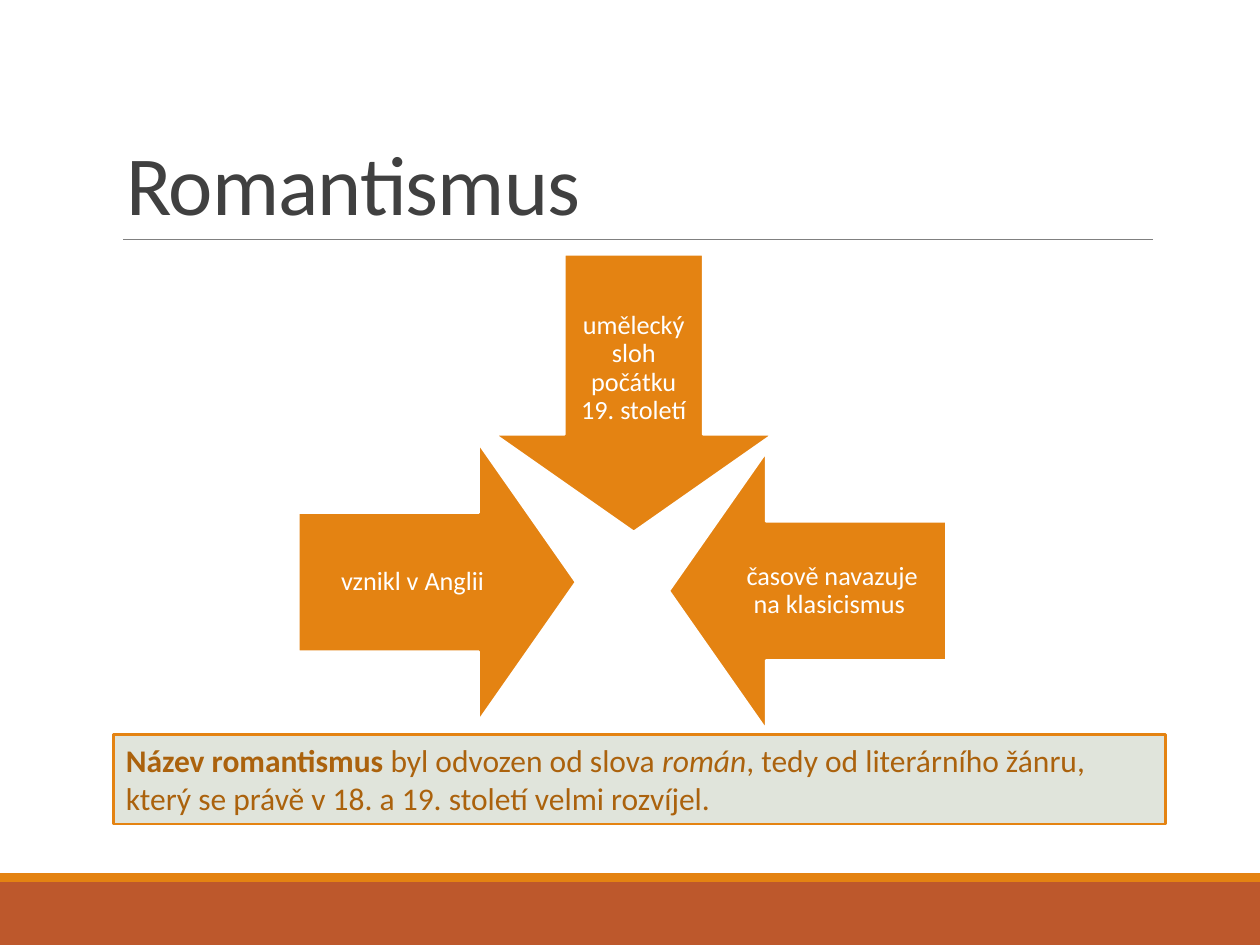
from pptx import Presentation
from pptx.dml.color import RGBColor
from pptx.enum import shapes, text
from pptx.oxml.ns import qn
from pptx.util import Inches, Pt

ORANGE, RUST, WHITE = "E48312", "BD582C", "FFFFFF"
ARROW_SIZE, TEXT_LENGTH, TEXT_BREADTH = 2.2, 1.81, 1.1


def colour(value):
    return RGBColor.from_string(value)


def inches(*lengths):
    return [Inches(length) for length in lengths]


def set_font(para, size, fill):
    para.font.name = "Calibri"
    para.font.size = Pt(size)
    para.font.color.rgb = colour(fill)


def add_filled(page, kind, box, fill, line=None, width=1):
    shape = page.shapes.add_shape(kind, *inches(*box))
    shape.shadow.inherit = False
    shape.fill.solid()
    shape.fill.fore_color.rgb = colour(fill)
    if line:
        shape.line.color.rgb = colour(line)
        shape.line.width = Pt(width)
    else:
        shape.line.fill.background()
    return shape


def add_footer(page, box):
    left, top, width, height = box
    stripe = 0.07
    add_filled(page, shapes.MSO_SHAPE.RECTANGLE,
               (left, top + stripe, width, height - stripe), RUST)
    add_filled(page, shapes.MSO_SHAPE.RECTANGLE, (left, top, width, stripe), ORANGE)


def add_title(page, box, wording):
    left, top, width, height = box
    bottom = top + height
    rule = page.shapes.add_connector(
        shapes.MSO_CONNECTOR.STRAIGHT, *inches(left + 0.08, bottom, left + width, bottom))
    rule.line.color.rgb = colour("808080")
    rule.line.width = Pt(0.5)
    properties = rule._element.spPr
    properties.append(properties.makeelement(qn("a:effectLst"), {}))

    title = page.shapes.title
    title.left, title.top, title.width, title.height = inches(*box)
    frame = title.text_frame
    frame.auto_size = text.MSO_AUTO_SIZE.NONE
    frame.vertical_anchor = text.MSO_ANCHOR.BOTTOM
    para = frame.paragraphs[0]
    para.alignment = text.PP_ALIGN.LEFT
    para.line_spacing = 0.85
    set_font(para, 48, "404040")
    span = para.add_run()
    span.text = wording
    span._r.get_or_add_rPr().set("spc", "-50")


def add_arrow(page, left, top, rotation, wording):
    arrow = add_filled(page, shapes.MSO_SHAPE.DOWN_ARROW,
                       (left, top, ARROW_SIZE, ARROW_SIZE), ORANGE, WHITE, 1.25)
    arrow.adjustments[0] = 0.5
    arrow.adjustments[1] = 0.35
    arrow.rotation = rotation

    inset = (ARROW_SIZE - TEXT_BREADTH) / 2
    if rotation == 0:
        label_box = (left + inset, top, TEXT_BREADTH, TEXT_LENGTH)
    else:
        shift = ARROW_SIZE - TEXT_LENGTH if rotation == 90 else 0
        label_box = (left + shift, top + inset, TEXT_LENGTH, TEXT_BREADTH)
    frame = page.shapes.add_textbox(*inches(*label_box)).text_frame
    frame.word_wrap = True
    frame.vertical_anchor = text.MSO_ANCHOR.MIDDLE
    frame.margin_left = frame.margin_right = Inches(0.12)
    frame.margin_top = frame.margin_bottom = Inches(0.12)
    para = frame.paragraphs[0]
    para.text = wording
    para.alignment = text.PP_ALIGN.CENTER
    para.line_spacing = 0.9
    set_font(para, 15, WHITE)


def add_note(page, box, parts):
    note = add_filled(page, shapes.MSO_SHAPE.RECTANGLE, box, "E0E4DB", ORANGE, 1.5)
    frame = note.text_frame
    frame.word_wrap = True
    frame.auto_size = text.MSO_AUTO_SIZE.SHAPE_TO_FIT_TEXT
    frame.vertical_anchor = text.MSO_ANCHOR.TOP
    para = frame.paragraphs[0]
    para.alignment = text.PP_ALIGN.LEFT
    set_font(para, 18, "AB620D")
    for wording, bold, italic in parts:
        span = para.add_run()
        span.text = wording
        span.font.bold = bold
        span.font.italic = italic


def main():
    deck = Presentation()
    deck.slide_width, deck.slide_height = inches(10, 7.5)
    page = deck.slides.add_slide(deck.slide_layouts[5])
    add_footer(page, (0, 6.93, 10, 0.57))
    add_title(page, (0.9, 0.31, 8.25, 1.59), "Romantismus")
    for arrow in (
        (3.93, 2.02, 0, "umělecký sloh počátku 19. století"),
        (5.31, 3.59, 90, "časově navazuje na klasicismus "),
        (2.37, 3.52, 270, "vznikl v Anglii"),
    ):
        add_arrow(page, *arrow)
    add_note(page, (0.9, 5.83, 8.35, 0.71), (
        ("Název romantismus ", True, False),
        ("byl odvozen od slova ", False, False),
        ("román", False, True),
        (", tedy od literárního žánru, který se právě v 18. a 19. století velmi rozvíjel.",
         False, False),
    ))
    deck.save("out.pptx")


if __name__ == "__main__":
    main()
